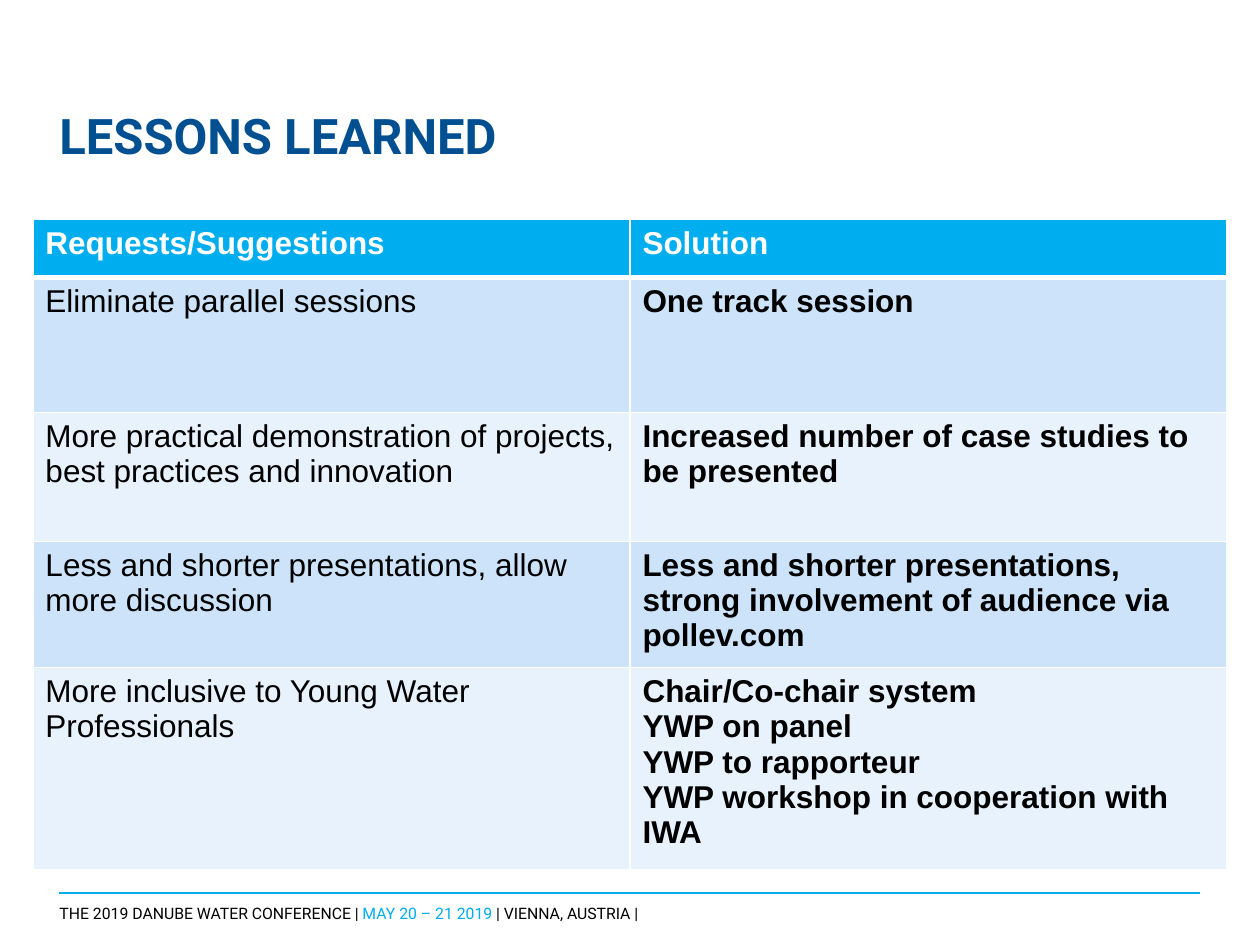
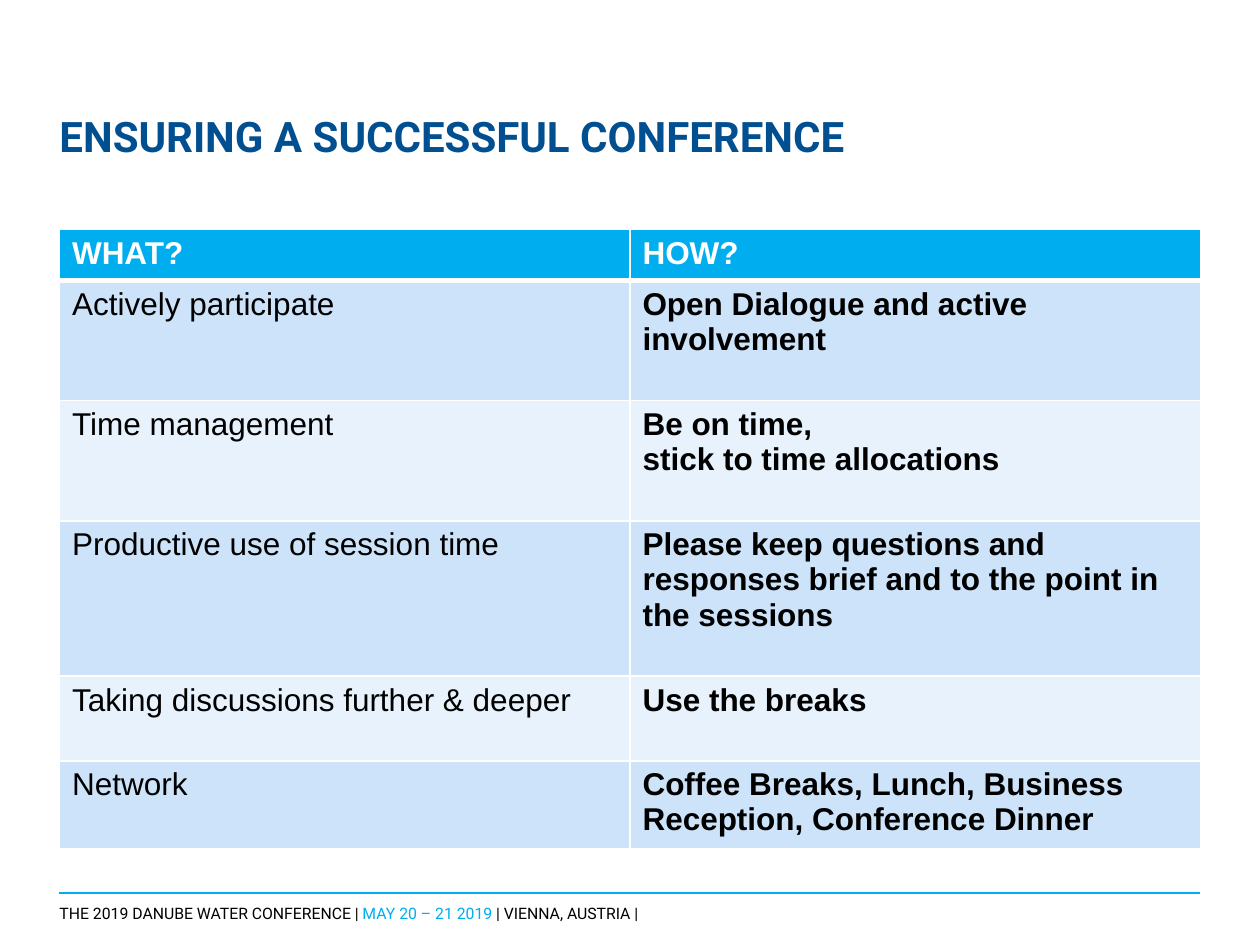
from lxml.etree import SubElement
from pptx import Presentation
from pptx.dml.color import RGBColor
from pptx.enum.shapes import MSO_CONNECTOR
from pptx.enum.text import MSO_ANCHOR, MSO_AUTO_SIZE, PP_ALIGN
from pptx.oxml.ns import qn
from pptx.util import Pt

COLORS = {
    "title": "004F90",
    "accent": "00AEEF",
    "text": "000000",
    "white": "FFFFFF",
    "band_dark": "CCE3F9",
    "band_light": "E7F2FC",
}
TITLE_FONT = "Roboto"
TABLE_FONT = "Arial"
PAGE_WIDTH, PAGE_HEIGHT = 720, 540
MARGIN = 34
CONTENT_WIDTH = PAGE_WIDTH - 2 * MARGIN

FOOTER = [
    ("THE 2019 DANUBE WATER CONFERENCE | ", "text"),
    ("MAY 20 – 21 2019 ", "accent"),
    ("| VIENNA, AUSTRIA |", "text"),
]

PAGES = [
    {
        "title": "LESSONS LEARNED",
        "title_size": 28,
        "left": 18.8,
        "top": 125.4,
        "row_heights": [33, 77.4, 73.7, 67.6, 108],
        "rows": [
            ("Requests/Suggestions", "Solution"),
            ("Eliminate parallel sessions", "One track session"),
            ("More practical demonstration of projects, best practices and innovation",
             "Increased number of case studies to be presented"),
            ("Less and shorter presentations, allow more discussion",
             "Less and shorter presentations, strong involvement of audience via pollev.com"),
            ("More inclusive to Young Water Professionals",
             "Chair/Co-chair system\nYWP on panel\nYWP to rapporteur\n"
             "YWP workshop in cooperation with IWA"),
        ],
    },
    {
        "title": "ENSURING A SUCCESSFUL CONFERENCE",
        "title_size": 24,
        "left": MARGIN,
        "top": 131.2,
        "row_heights": [29.2, 68.6, 68.6, 88.8, 48.4, 47.6],
        "rows": [
            ("WHAT?", "HOW?"),
            ("Actively participate", "Open Dialogue and active involvement"),
            ("Time management", "Be on time,\nstick to time allocations"),
            ("Productive use of session time",
             "Please keep questions and responses brief and to the point in the sessions"),
            ("Taking discussions further & deeper", "Use the breaks"),
            ("Network", "Coffee Breaks, Lunch, Business Reception, Conference Dinner"),
        ],
    },
]


def color(name):
    return RGBColor.from_string(COLORS[name])


def style_font(font, name, size, bold=False, color_name=None):
    font.name = name
    font.size = Pt(size)
    font.bold = bold
    if color_name:
        font.color.rgb = color(color_name)


def clear_insets(frame):
    frame.margin_left = frame.margin_right = frame.margin_top = frame.margin_bottom = 0
    frame.word_wrap = True


def add_title(page, text, size):
    title = page.shapes.title
    title.left, title.top = Pt(MARGIN), Pt(51)
    title.width, title.height = Pt(CONTENT_WIDTH), Pt(60)
    frame = title.text_frame
    frame.text = text
    clear_insets(frame)
    frame.auto_size = MSO_AUTO_SIZE.NONE
    frame.vertical_anchor = MSO_ANCHOR.MIDDLE
    para = frame.paragraphs[0]
    para.alignment = PP_ALIGN.LEFT
    para.line_spacing = 0.7
    style_font(para.font, TITLE_FONT, size, True, "title")


def add_footer(page):
    rule = page.shapes.add_connector(
        MSO_CONNECTOR.STRAIGHT, Pt(MARGIN), Pt(510.4), Pt(PAGE_WIDTH - MARGIN), Pt(510.4))
    rule.line.color.rgb = color("accent")
    rule.line.width = Pt(1)
    SubElement(rule.element.spPr, qn("a:effectLst"))
    box = page.shapes.add_textbox(Pt(MARGIN), Pt(516.2), Pt(CONTENT_WIDTH), Pt(22))
    clear_insets(box.text_frame)
    para = box.text_frame.paragraphs[0]
    style_font(para.font, TITLE_FONT, 9)
    for text, color_name in FOOTER:
        span = para.add_run()
        span.text = text
        span.font.color.rgb = color(color_name)


def add_borders(cell, top, bottom):
    properties = cell._tc.get_or_add_tcPr()
    for side, width in (("L", 1), ("R", 1), ("T", top), ("B", bottom)):
        line = SubElement(properties, qn(f"a:ln{side}"), w=str(Pt(width)))
        fill = SubElement(line, qn("a:solidFill"))
        SubElement(fill, qn("a:srgbClr"), val=COLORS["white"])


def fill_cell(cell, text, row, column):
    header = row == 0
    add_borders(cell, 3 if row == 1 else 1, 3 if header else 1)
    cell.fill.solid()
    band = "band_dark" if row % 2 else "band_light"
    cell.fill.fore_color.rgb = color("accent" if header else band)
    cell.text = text
    for para in cell.text_frame.paragraphs:
        style_font(para.font, TABLE_FONT, 18, header or column == 1,
                   "white" if header else "text")


def add_two_column_table(page, content):
    left, heights = content["left"], content["row_heights"]
    width = PAGE_WIDTH - 2 * left
    table = page.shapes.add_table(
        len(heights), 2, Pt(left), Pt(content["top"]), Pt(width), Pt(sum(heights))).table
    for column in table.columns:
        column.width = Pt(width / 2)
    for row, (height, texts) in enumerate(zip(heights, content["rows"])):
        table.rows[row].height = Pt(height)
        for column, text in enumerate(texts):
            fill_cell(table.cell(row, column), text, row, column)


def main():
    deck = Presentation()
    deck.slide_width, deck.slide_height = Pt(PAGE_WIDTH), Pt(PAGE_HEIGHT)
    for content in PAGES:
        page = deck.slides.add_slide(deck.slide_layouts.get_by_name("Title Only"))
        add_footer(page)
        add_title(page, content["title"], content["title_size"])
        add_two_column_table(page, content)
    deck.save("out.pptx")


if __name__ == "__main__":
    main()
